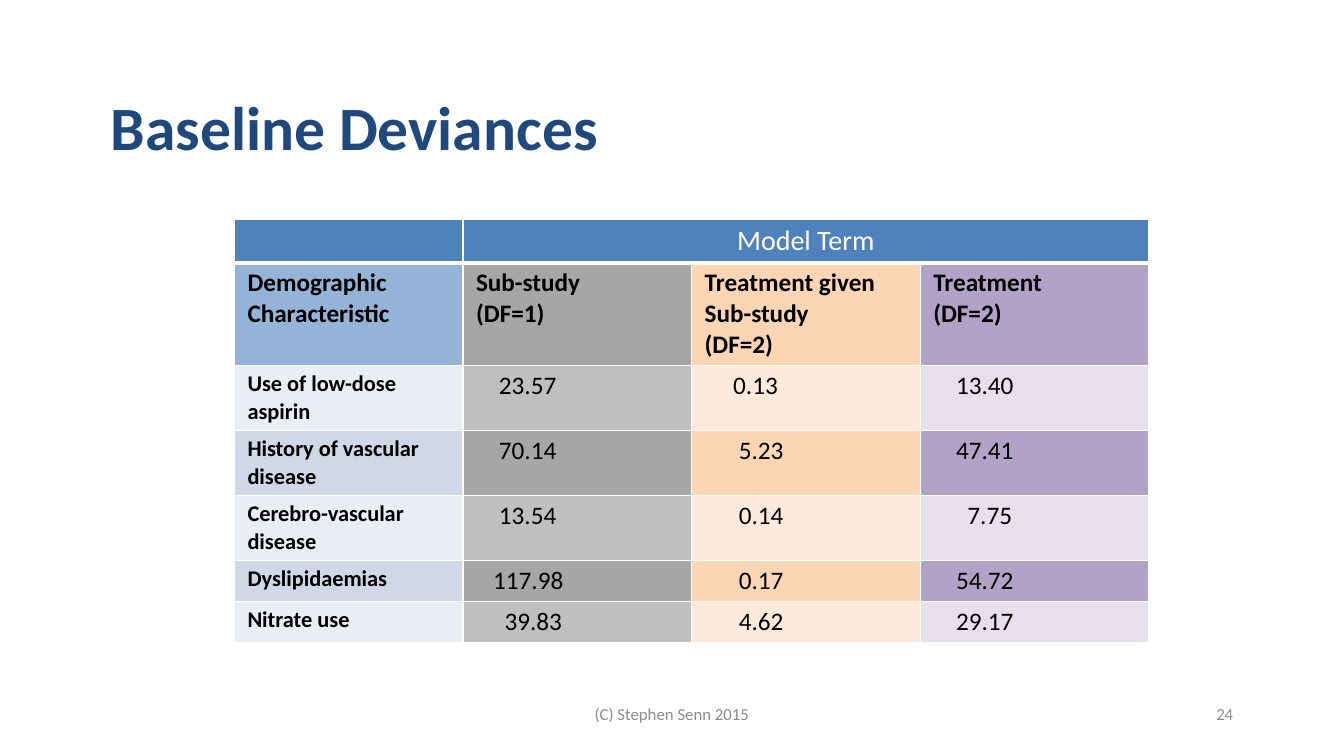
from lxml.etree import SubElement
from pptx import Presentation
from pptx.dml.color import RGBColor
from pptx.enum.text import MSO_ANCHOR, PP_ALIGN
from pptx.oxml.ns import qn
from pptx.util import Pt

FONT = "Calibri"
NAVY = RGBColor(0x1F, 0x49, 0x7D)
BLUE = RGBColor(0x4F, 0x81, 0xBD)
WHITE = RGBColor(0xFF, 0xFF, 0xFF)
BLACK = RGBColor(0x00, 0x00, 0x00)
GREY = RGBColor(0x8C, 0x8C, 0x8C)
HEADING_FILLS = [
    RGBColor(0x95, 0xB3, 0xD7),
    RGBColor(0xA6, 0xA6, 0xA6),
    RGBColor(0xFC, 0xD5, 0xB5),
    RGBColor(0xB3, 0xA2, 0xC7),
]
LIGHT_FILLS = [
    RGBColor(0xE9, 0xED, 0xF4),
    RGBColor(0xBF, 0xBF, 0xBF),
    RGBColor(0xFD, 0xEA, 0xDA),
    RGBColor(0xE6, 0xE0, 0xEC),
]
DARK_FILLS = [RGBColor(0xD0, 0xD8, 0xE8)] + HEADING_FILLS[1:]

TEXT_BOXES = [
    ("Baseline Deviances", (72, 48, 816, 90), 44, NAVY, True, PP_ALIGN.LEFT),
    ("(C) Stephen Senn 2015", (328, 492, 304, 36), 12, GREY, False, PP_ALIGN.CENTER),
    ("24", (688, 492, 200, 36), 12, GREY, False, PP_ALIGN.RIGHT),
]
HEADINGS = [
    ["Demographic Characteristic"],
    ["Sub-study", "(DF=1)"],
    ["Treatment given Sub-study", "(DF=2)"],
    ["Treatment", "(DF=2)"],
]
DEVIANCES = [
    ("Use of low-dose aspirin", ["23.57", "0.13", "13.40"]),
    ("History of vascular disease", ["70.14", "5.23", "47.41"]),
    ("Cerebro-vascular disease", ["13.54", "0.14", "7.75"]),
    ("Dyslipidaemias", ["117.98", "0.17", "54.72"]),
    ("Nitrate use", ["39.83", "4.62", "29.17"]),
]
VALUE_INDENTS = [
    [16.3, 20.35, 16.3],
    [16.3, 24.4, 16.3],
    [16.3, 24.4, 24.4],
    [12.2, 24.4, 16.3],
    [20.35, 24.4, 16.3],
]
TABLE_LEFT, TABLE_TOP = 167.4, 156.5
COLUMN_WIDTH = 163.3
ROW_HEIGHTS = [31.2, 73.4, 46.4, 46.4, 46.4, 29.2, 29.2]
SIDE_MARGIN, END_MARGIN = 9.4, 3.6


def write_lines(frame, lines, size, color, bold=False, align=PP_ALIGN.LEFT):
    frame.word_wrap = True
    for index, line in enumerate(lines):
        paragraph = frame.add_paragraph() if index else frame.paragraphs[0]
        paragraph.alignment = align
        run = paragraph.add_run()
        run.text = line
        run.font.name = FONT
        run.font.size = Pt(size)
        run.font.bold = bold
        run.font.color.rgb = color


def style_cell(cell, fill, bottom_width=1, indent=0):
    cell.margin_left = Pt(SIDE_MARGIN + indent)
    cell.margin_right = Pt(SIDE_MARGIN)
    cell.margin_top = cell.margin_bottom = Pt(END_MARGIN)
    properties = cell._tc.get_or_add_tcPr()
    for side, width in (("L", 1), ("R", 1), ("T", 1), ("B", bottom_width)):
        line = SubElement(properties, qn("a:ln" + side), w=str(Pt(width)))
        SubElement(SubElement(line, qn("a:solidFill")), qn("a:srgbClr"), val=str(WHITE))
    cell.fill.solid()
    cell.fill.fore_color.rgb = fill
    properties.append(properties.find(qn("a:solidFill")))


def add_deviance_table(slide):
    column_count = len(HEADINGS)
    frame = slide.shapes.add_table(
        len(ROW_HEIGHTS), column_count, Pt(TABLE_LEFT), Pt(TABLE_TOP),
        Pt(COLUMN_WIDTH * column_count), Pt(sum(ROW_HEIGHTS)),
    )
    table = frame.table
    for column in table.columns:
        column.width = Pt(COLUMN_WIDTH)
    for row, height in zip(table.rows, ROW_HEIGHTS):
        row.height = Pt(height)

    for column, lines in enumerate(HEADINGS):
        style_cell(table.cell(0, column), BLUE, bottom_width=3)
        cell = table.cell(1, column)
        style_cell(cell, HEADING_FILLS[column])
        write_lines(cell.text_frame, lines, 18, BLACK, bold=True)
    model_term = table.cell(0, 1)
    model_term.merge(table.cell(0, column_count - 1))
    write_lines(model_term.text_frame, ["Model Term"], 20, WHITE, align=PP_ALIGN.CENTER)

    for index, (characteristic, values) in enumerate(DEVIANCES):
        fills = DARK_FILLS if index % 2 else LIGHT_FILLS
        label = table.cell(index + 2, 0)
        style_cell(label, fills[0])
        write_lines(label.text_frame, [characteristic], 16, BLACK, bold=True)
        for column, (value, indent) in enumerate(zip(values, VALUE_INDENTS[index]), 1):
            cell = table.cell(index + 2, column)
            style_cell(cell, fills[column], indent=indent)
            write_lines(cell.text_frame, [value], 18, BLACK)


def main():
    presentation = Presentation()
    presentation.slide_width = Pt(960)
    presentation.slide_height = Pt(540)
    slide = presentation.slides.add_slide(presentation.slide_layouts[6])
    for text, bounds, size, color, bold, align in TEXT_BOXES:
        shape = slide.shapes.add_textbox(*(Pt(length) for length in bounds))
        shape.text_frame.vertical_anchor = MSO_ANCHOR.MIDDLE
        write_lines(shape.text_frame, [text], size, color, bold, align)
        shape.text_frame.paragraphs[0].line_spacing = 0.9 if color == NAVY else 1.0
    add_deviance_table(slide)
    presentation.save("out.pptx")


if __name__ == "__main__":
    main()
